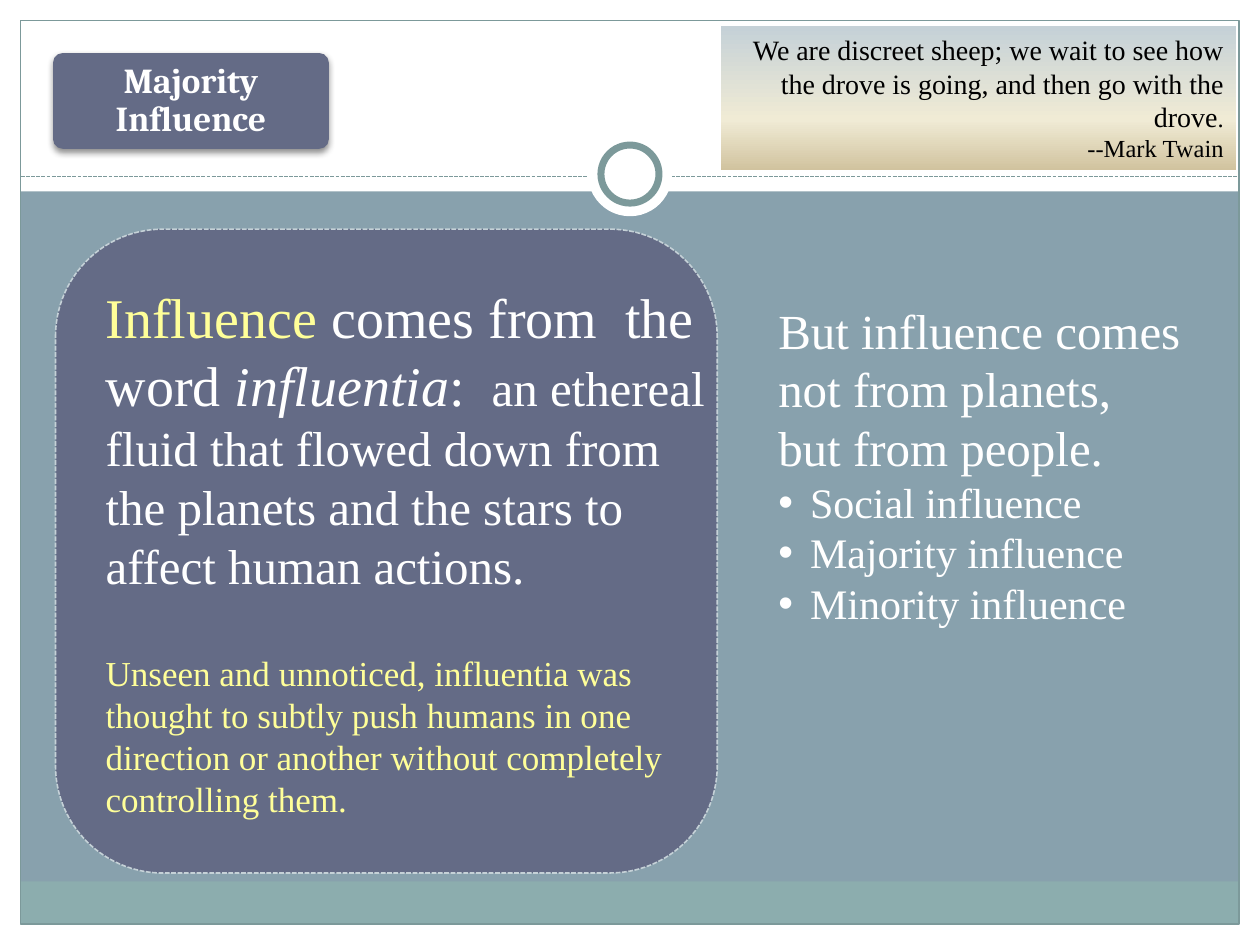
"""Build the Majority Influence slide."""
from lxml.etree import SubElement
from pptx import Presentation
from pptx.dml.color import RGBColor
from pptx.enum.dml import MSO_LINE_DASH_STYLE as Dash
from pptx.enum.shapes import MSO_CONNECTOR as Connector, MSO_SHAPE as Shape
from pptx.enum.text import MSO_ANCHOR as Anchor, MSO_AUTO_SIZE as AutoSize, PP_ALIGN as Align
from pptx.oxml import parse_xml
from pptx.oxml.ns import nsdecls, qn
from pptx.util import Cm, Pt

COLORS = {
    "background": "88A1AD", "white": "FFFFFF", "strip": "8CADAE", "frame": "7C999A",
    "panel": "646B86", "panel edge": "C5D1D7", "yellow": "FFFF99", "black": "000000",
}
QUOTE_STOPS = [(0, "C5D1D7"), (65, "F0EBD5"), (100, "D1C39F")]

TITLE = [[("Majority Influence", {})]]
QUOTE = [
    [("We are discreet sheep; we wait to see how the drove is going, and then go with the drove", {"size": 16}),
     (".", {})],
    [("--Mark Twain", {})],
]
ORIGIN = [
    [("Influence", {"size": 32, "color": "yellow"}),
     (" comes from  the word ", {"size": 32}),
     ("influentia", {"size": 32, "italic": True}),
     (": ", {"size": 32}),
     (" an ethereal fluid that flowed down from the planets and the stars to affect human actions.", {})],
    [("Unseen and unnoticed, influentia was thought to subtly push humans in one direction or another "
      "without completely controlling them.", {"size": 20, "color": "yellow"})],
]
CONCLUSION = [[("But influence comes not from planets, but from people.", {"size": 28})]]
KINDS = ["Social influence", "Majority influence", "Minority influence"]

WIDTH, HEIGHT, MARGIN = 25.4, 19.05, 0.42
INNER_WIDTH = WIDTH - 2 * MARGIN
HEADER_HEIGHT, DIVIDER_Y, STRIP_HEIGHT = 3.86, 3.56, 0.86
RING_X, RING_Y = WIDTH / 2, 3.51
BADGE = (1.07, 1.07, 5.56, 1.93)
TITLE_AREA = (1.12, 1.12, 5.46, 1.83)
PANEL = (1.12, 4.62, 13.34, 12.98)
ORIGIN_AREA = (1.75, 5.26, 13.06, 11.71)
QUOTE_AREA = (14.53, 0.53, 10.39, 2.9)
CONCLUSION_AREA = (15.44, 5.92, 8.61, 8.13)


def rgb(name):
    return RGBColor.from_string(COLORS[name])


def draw(slide, kind, area, fill=None, line=None, weight=0.75, dash=None):
    shape = slide.shapes.add_shape(kind, *map(Cm, area))
    shape.shadow.inherit = False
    if fill:
        shape.fill.solid()
        shape.fill.fore_color.rgb = rgb(fill)
    else:
        shape.fill.background()
    if line:
        shape.line.color.rgb = rgb(line)
        shape.line.width = Pt(weight)
        shape.line.dash_style = dash
    else:
        shape.line.fill.background()
    return shape


def write(frame, paragraphs, size=28, color="white", font="Times New Roman", bold=False,
          align=Align.LEFT, anchor=Anchor.TOP, insets=(0.25, 0.13), spacing=None, gap=0, bullet=None):
    frame.word_wrap = True
    frame.auto_size = AutoSize.NONE
    frame.vertical_anchor = anchor
    frame.margin_left = frame.margin_right = Cm(insets[0])
    frame.margin_top = frame.margin_bottom = Cm(insets[1])
    for index, runs in enumerate(paragraphs):
        fresh = not frame.paragraphs[0].runs
        paragraph = frame.paragraphs[0] if fresh else frame.add_paragraph()
        paragraph.alignment = align
        if spacing:
            paragraph.line_spacing = spacing
        if index and gap:
            paragraph.space_before = Pt(gap)
        if bullet:
            properties = paragraph._p.get_or_add_pPr()
            properties.set("marL", str(Cm(0.64)))
            properties.set("indent", str(-Cm(0.64)))
            SubElement(properties, qn("a:buFont"), typeface="Arial")
            SubElement(properties, qn("a:buChar"), char=bullet)
        for text, style in runs:
            run = paragraph.add_run()
            run.text = text
            run.font.name = font
            run.font.bold = bold
            run.font.size = Pt(style.get("size", size))
            run.font.italic = style.get("italic", False)
            run.font.color.rgb = rgb(style.get("color", color))


def add_text(slide, area, paragraphs, **style):
    box = slide.shapes.add_textbox(*map(Cm, area))
    write(box.text_frame, paragraphs, **style)
    return box.text_frame


def add_backdrop(slide):
    slide.background.fill.solid()
    slide.background.fill.fore_color.rgb = rgb("background")
    bottom = HEIGHT - MARGIN
    for area in [(0, bottom, WIDTH, MARGIN), (0, 0, WIDTH, HEADER_HEIGHT),
                 (0, 0, MARGIN, HEIGHT), (WIDTH - MARGIN, 0, MARGIN, HEIGHT)]:
        draw(slide, Shape.RECTANGLE, area, "white")
    draw(slide, Shape.RECTANGLE, (MARGIN, bottom - STRIP_HEIGHT, INNER_WIDTH, STRIP_HEIGHT), "strip")
    draw(slide, Shape.RECTANGLE, (MARGIN, MARGIN, INNER_WIDTH, HEIGHT - 2 * MARGIN), line="frame")
    divider = slide.shapes.add_connector(
        Connector.STRAIGHT, Cm(MARGIN), Cm(DIVIDER_Y), Cm(WIDTH - MARGIN), Cm(DIVIDER_Y))
    divider.line.color.rgb = rgb("frame")
    divider.line.width = Pt(0.75)
    divider.line.dash_style = Dash.SQUARE_DOT
    SubElement(divider.element.spPr, qn("a:effectLst"))
    for diameter, line in [(1.7, None), (1.17, "frame")]:
        area = (RING_X - diameter / 2, RING_Y - diameter / 2, diameter, diameter)
        draw(slide, Shape.OVAL, area, "white", line, weight=4)


def add_title(slide):
    badge = draw(slide, Shape.ROUNDED_RECTANGLE, BADGE, "panel")
    badge.adjustments[0] = 0.1
    badge.element.spPr.find(qn("a:effectLst")).append(parse_xml(
        f'<a:outerShdw {nsdecls("a")} blurRad="{Pt(4)}" dist="{Pt(2)}" dir="5400000" rotWithShape="0">'
        f'<a:srgbClr val="{COLORS["black"]}"><a:alpha val="45000"/></a:srgbClr></a:outerShdw>'))
    title = slide.shapes.title
    title.left, title.top, title.width, title.height = map(Cm, TITLE_AREA)
    badge.element.addnext(title.element)
    write(title.text_frame, TITLE, size=20, font="Cambria", bold=True, align=Align.CENTER,
          anchor=Anchor.MIDDLE, insets=(0.1, 0.08), spacing=0.9)


def add_quote(slide):
    quote = draw(slide, Shape.RECTANGLE, QUOTE_AREA)
    stops = "".join(f'<a:gs pos="{position * 1000}"><a:srgbClr val="{color}"/></a:gs>'
                    for position, color in QUOTE_STOPS)
    properties = quote.element.spPr
    properties.replace(properties.find(qn("a:noFill")), parse_xml(
        f'<a:gradFill {nsdecls("a")} rotWithShape="1"><a:gsLst>{stops}</a:gsLst>'
        '<a:lin ang="5400000" scaled="0"/></a:gradFill>'))
    write(quote.text_frame, QUOTE, size=14, color="black", align=Align.RIGHT)


def main():
    deck = Presentation()
    deck.slide_width, deck.slide_height = Cm(WIDTH), Cm(HEIGHT)
    slide = deck.slides.add_slide(deck.slide_layouts[5])
    add_backdrop(slide)
    add_title(slide)
    draw(slide, Shape.ROUNDED_RECTANGLE, PANEL, "panel", "panel edge", 0.9, Dash.SQUARE_DOT)
    add_text(slide, ORIGIN_AREA, ORIGIN, anchor=Anchor.MIDDLE, insets=(0.38, 0.38), gap=33)
    add_quote(slide)
    conclusion = add_text(slide, CONCLUSION_AREA, CONCLUSION)
    write(conclusion, [[(kind, {})] for kind in KINDS], size=24, bullet="•")
    deck.save("out.pptx")


if __name__ == "__main__":
    main()
